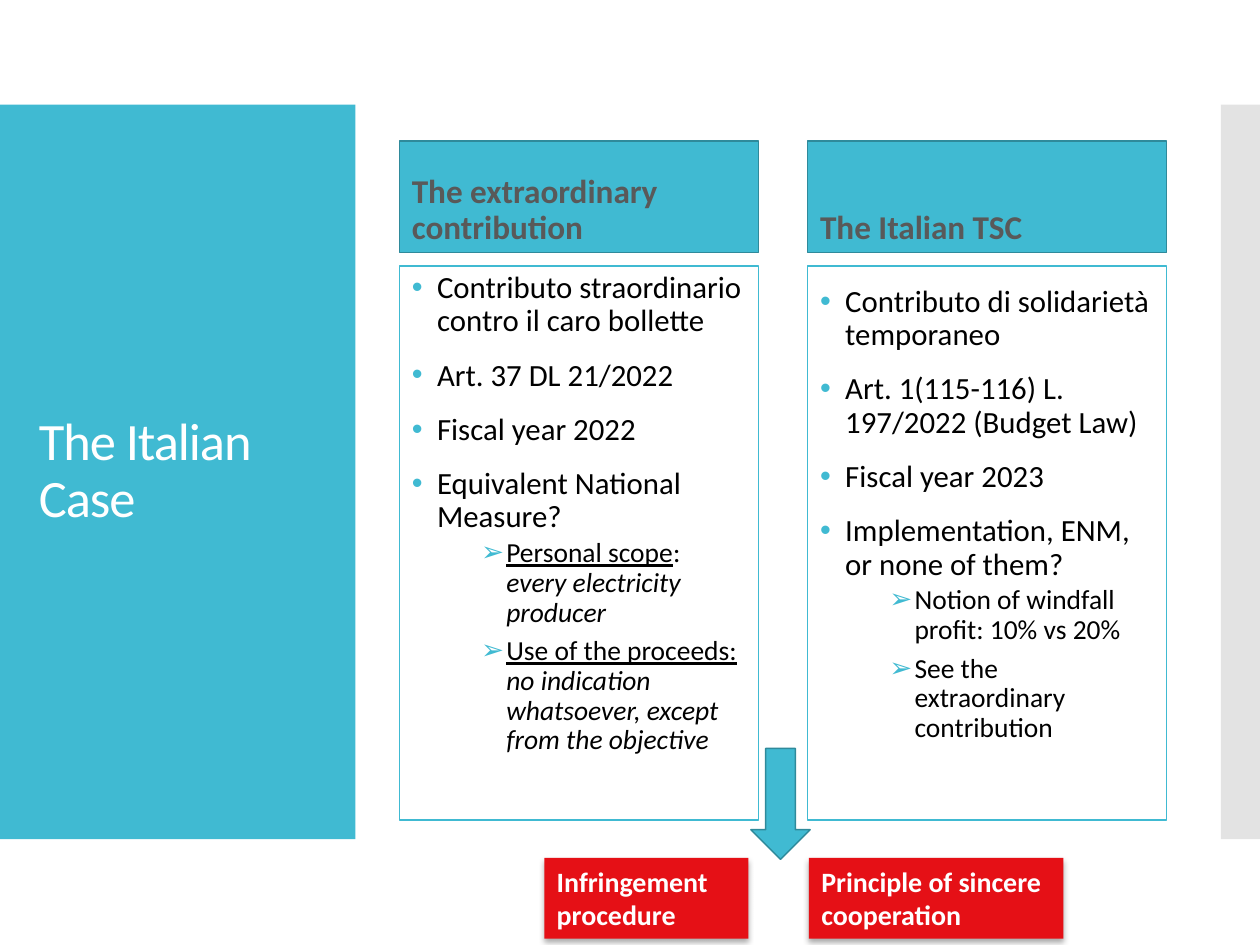
from lxml.etree import SubElement
from pptx import Presentation
from pptx.dml.color import RGBColor
from pptx.enum.shapes import MSO_SHAPE as Shape
from pptx.enum.text import MSO_ANCHOR as Anchor, PP_ALIGN as Align
from pptx.oxml.ns import qn
from pptx.util import Emu, Inches, Pt

TEAL = RGBColor(0x40, 0xBA, 0xD2)
DARK_TEAL = RGBColor(0x2F, 0x8A, 0x9B)
GRAY = RGBColor(0xC8, 0xC8, 0xC8)
DARK_GRAY = RGBColor(0x59, 0x59, 0x59)
RED = RGBColor(0xE5, 0x10, 0x16)
WHITE = RGBColor(0xFF, 0xFF, 0xFF)
BLACK = RGBColor(0x00, 0x00, 0x00)

# Bullet levels: character, left indent, space before, space after, text size
LEVELS = [("•", 0.2, 12, 0, 17.6), ("➢", 0.75, 2.5, 2.5, 15.7)]
HANGING = 0.2

# Each item: level, then runs of (text, marks), where u underlines and i slants
CONTRIBUTION = [
    (0, [("Contributo straordinario contro il caro bollette", "")]),
    (0, [("Art. 37 DL 21/2022", "")]),
    (0, [("Fiscal year 2022", "")]),
    (0, [("Equivalent National Measure?", "")]),
    (1, [("Personal scope", "u"), (": ", ""), ("every electricity producer", "i")]),
    (1, [("Use of the proceeds: ", "u"),
         ("no indication whatsoever, except from the objective", "i")]),
]
SOLIDARITY = [
    (0, [("Contributo di solidarietà temporaneo", "")]),
    (0, [("Art. 1(115-116) L. 197/2022 (Budget Law)", "")]),
    (0, [("Fiscal year 2023", "")]),
    (0, [("Implementation, ENM, or none of them?", "")]),
    (1, [("Notion of windfall profit: 10% vs 20%", "")]),
    (1, [("See the extraordinary contribution", "")]),
]


class SlideBuilder:
    """Draws on one slide; places are columns and rows of a 100 by 75 grid."""

    font = "Calibri"
    line_width = Pt(0.85)

    def __init__(self, presentation):
        self.slide = presentation.slides.add_slide(presentation.slide_layouts[6])
        self.column = presentation.slide_width / 100
        self.row = presentation.slide_height / 75

    def place(self, left, top, width, height):
        return [Emu(round(count * unit)) for count, unit in
                zip((left, top, width, height), (self.column, self.row) * 2)]

    def shape(self, place, fill, line=None, kind=Shape.RECTANGLE, opacity=None):
        shape = self.slide.shapes.add_shape(kind, *self.place(*place))
        shape.shadow.inherit = False
        shape.fill.solid()
        shape.fill.fore_color.rgb = fill
        if line is None:
            shape.line.fill.background()
        else:
            shape.line.color.rgb = line
            shape.line.width = self.line_width
        if opacity is not None:
            color = shape.fill._xPr.find(".//" + qn("a:srgbClr"))
            SubElement(color, qn("a:alpha"), val=str(opacity * 1000))
        return shape

    def format_run(self, run, size, color, bold=False):
        run.font.name = self.font
        run.font.size = Pt(size)
        run.font.color.rgb = color
        run.font.bold = bold

    def text(self, shape, text, size, color, anchor, bold=True, spacing=0.9):
        frame = shape.text_frame
        frame.text = text
        frame.word_wrap = True
        frame.vertical_anchor = anchor
        paragraph = frame.paragraphs[0]
        paragraph.alignment = Align.LEFT
        paragraph.line_spacing = spacing
        self.format_run(paragraph.runs[0], size, color, bold)
        return paragraph.runs[0]

    def title(self, place, text):
        box = self.slide.shapes.add_textbox(*self.place(*place))
        run = self.text(box, text, 30, WHITE, Anchor.MIDDLE, bold=False)
        run.font._element.set("spc", "-60")

    def header(self, place, text):
        shape = self.shape(place, TEAL, DARK_TEAL)
        self.text(shape, text, 19, DARK_GRAY, Anchor.BOTTOM)

    def bullet_list(self, place, items, anchor, bottom_inset=0.05):
        frame = self.shape(place, WHITE, TEAL).text_frame
        frame.word_wrap = True
        frame.vertical_anchor = anchor
        frame.margin_bottom = Inches(bottom_inset)
        for index, (level, runs) in enumerate(items):
            paragraph = frame.add_paragraph() if index else frame.paragraphs[0]
            size = self.bullet(paragraph, level)
            for text, marks in runs:
                run = paragraph.add_run()
                run.text = text
                self.format_run(run, size, BLACK)
                run.font.underline = "u" in marks
                run.font.italic = "i" in marks

    def bullet(self, paragraph, level):
        character, indent, before, after, size = LEVELS[level]
        paragraph.level = level
        paragraph.alignment = Align.LEFT
        paragraph.line_spacing = 0.9
        paragraph.space_before = Pt(before)
        paragraph.space_after = Pt(after)
        properties = paragraph._p.get_or_add_pPr()
        properties.set("marL", str(Inches(indent)))
        properties.set("indent", str(-Inches(HANGING)))
        color = SubElement(properties, qn("a:buClr"))
        SubElement(color, qn("a:srgbClr"), val=str(TEAL))
        SubElement(properties, qn("a:buFont"), typeface="Arial")
        SubElement(properties, qn("a:buChar"), char=character)
        return size

    def callout(self, place, text):
        shape = self.shape(place, RED)
        self.text(shape, text, 16, WHITE, Anchor.TOP, spacing=1.0)
        effects = shape._element.spPr.find(qn("a:effectLst"))
        shadow = SubElement(effects, qn("a:outerShdw"), blurRad=str(Pt(3.5)),
                            dist=str(Pt(2.2)), dir="5400000", rotWithShape="0")
        color = SubElement(shadow, qn("a:srgbClr"), val=str(BLACK))
        SubElement(color, qn("a:alpha"), val="32000")


def main():
    presentation = Presentation()
    presentation.slide_width = Inches(10)
    presentation.slide_height = Inches(7.5)
    builder = SlideBuilder(presentation)

    # Side panels and title
    builder.shape((0, 8.3, 28.2, 58.3), TEAL)
    builder.shape((96.9, 8.3, 3.1, 58.3), GRAY, opacity=50)
    builder.title((2.1, 12.3, 24.2, 50.3), "The Italian Case")

    # Two compared columns; the second list sits a little above the middle
    columns = [
        (31.7, "The extraordinary contribution", CONTRIBUTION, Anchor.TOP, 0.05),
        (64.1, "The Italian TSC", SOLIDARITY, Anchor.MIDDLE, 0.5),
    ]
    for left, heading, items, anchor, bottom_inset in columns:
        builder.header((left, 11.2, 28.5, 8.85), heading)
        builder.bullet_list((left, 21.1, 28.5, 44), items, anchor, bottom_inset)

    # Arrow to the consequences
    builder.shape((59.6, 59.4, 4.7, 8.8), TEAL, DARK_TEAL, Shape.DOWN_ARROW)
    builder.callout((43.2, 68.1, 16.2, 6.4), "Infringement procedure")
    builder.callout((64.2, 68.1, 20.2, 6.4), "Principle of sincere cooperation")

    presentation.save("out.pptx")


if __name__ == "__main__":
    main()
